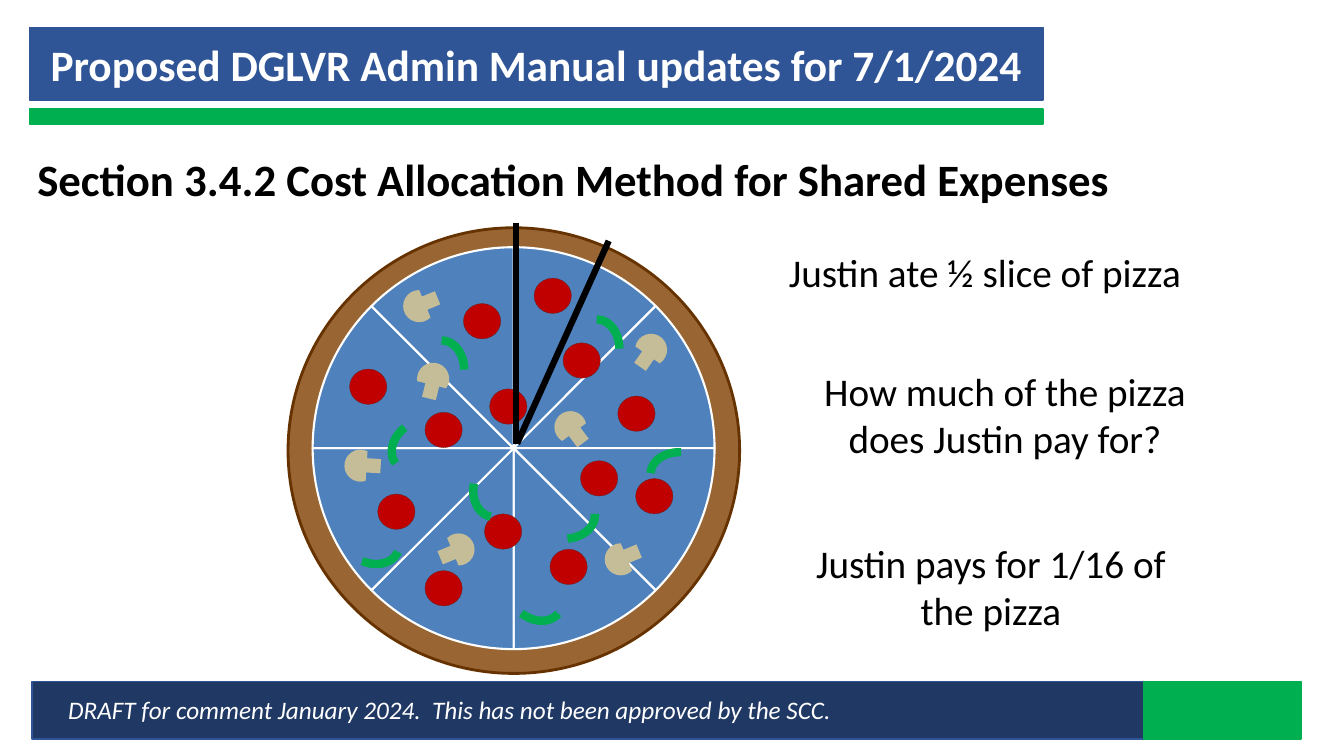
import math
from collections import namedtuple
from dataclasses import dataclass

import lxml.etree
import pptx
import pptx.chart.data
import pptx.dml.color
import pptx.enum.chart
import pptx.enum.shapes
import pptx.enum.text
import pptx.oxml
import pptx.oxml.ns
import pptx.util

Cm = pptx.util.Cm
Pt = pptx.util.Pt
Kind = pptx.enum.shapes.MSO_SHAPE
Align = pptx.enum.text.PP_ALIGN
Box = namedtuple("Box", "x y w h")


@dataclass(frozen=True)
class Theme:
    font: str = "Calibri"
    white: str = "FFFFFF"
    black: str = "000000"
    blue: str = "2F5597"
    navy: str = "203864"
    green: str = "00B050"
    crust: str = "996633"
    rim: str = "663300"
    slice: str = "70AD47"
    meat: str = "C00000"
    edge: str = "632523"
    shroom: str = "C4BD97"
    head: float = 32
    title: float = 31
    body: float = 28
    foot: float = 18
    chart: float = 10


THEME = Theme()


def color(code):
    return pptx.dml.color.RGBColor.from_string(code)


def place(box, x, y, w, h):
    return [Cm(n) for n in (box.x + x, box.y + y, w, h)]


def write(shape, text, size, ink=THEME.black, bold=False, italic=False,
          align=Align.LEFT, space=None, anchor=None, grow=True):
    frame = shape.text_frame
    frame.word_wrap = True
    fit = pptx.enum.text.MSO_AUTO_SIZE
    frame.auto_size = fit.SHAPE_TO_FIT_TEXT if grow else fit.NONE
    if anchor is not None:
        frame.vertical_anchor = anchor
    para = frame.paragraphs[0]
    para.alignment = align
    if space:
        para.line_spacing = space
    run = para.add_run()
    run.text = text
    font = run.font
    font.name, font.size = THEME.font, Pt(size)
    font.bold, font.italic = bold, italic
    font.color.rgb = color(ink)


def label(shapes, spot, text, size, **style):
    write(shapes.add_textbox(*spot), text, size, **style)


def draw(shapes, kind, spot, fill=None, line=None, width=1, turn=0):
    shape = shapes.add_shape(kind, *spot)
    shape.shadow.inherit = False
    shape.rotation = turn
    if fill:
        shape.fill.solid()
        shape.fill.fore_color.rgb = color(fill)
    else:
        shape.fill.background()
    if line:
        shape.line.color.rgb = color(line)
        shape.line.width = Pt(width)
    else:
        shape.line.fill.background()


def header(slide, box):
    bars = ((0, 1.83, THEME.blue), (2.06, 0.38, THEME.green))
    for y, h, tint in bars:
        draw(slide.shapes, Kind.RECTANGLE, place(box, 0, y, box.w, h), tint, tint)
    title = slide.shapes.title
    title.left, title.top, title.width, title.height = place(box, 0.28, -0.05, 25.02, 2.29)
    write(title, "Proposed DGLVR Admin Manual updates for 7/1/2024", THEME.title,
          ink=THEME.white, bold=True, space=0.7, grow=False,
          anchor=pptx.enum.text.MSO_ANCHOR.MIDDLE)
    title.element.getparent().append(title.element)


def footer(slide, box):
    split = 28.02
    draw(slide.shapes, Kind.RECTANGLE, place(box, 0, 0, split, box.h), THEME.navy, THEME.blue)
    draw(slide.shapes, Kind.RECTANGLE, place(box, split, 0, box.w - split, box.h),
         THEME.green, THEME.green)
    label(slide.shapes, place(box, 0.66, 0.2, 20.17, 1.02),
          "DRAFT for comment January 2024.  This has not been approved by the SCC.",
          THEME.foot, ink=THEME.white, italic=True)


def notes(slide, box):
    rows = (
        (0, 0, 10.54, 1.45, "Justin ate ½ slice of pizza", Align.LEFT),
        (0.13, 3.02, 11.13, 2.64, "How much of the pizza does Justin pay for?", Align.CENTER),
        (0.08, 7.34, 10.52, 2.64, "Justin pays for 1/16 of the pizza", Align.CENTER),
    )
    for x, y, w, h, text, align in rows:
        label(slide.shapes, place(box, x, y, w, h), text, THEME.body, align=align)


def pie(shapes, box):
    data = pptx.chart.data.CategoryChartData()
    data.categories = [str(n) for n in range(1, 9)]
    data.add_series("Series 1", [12] * 8)
    w, h, disc = 17.17, 10.85, 10.13
    chart = shapes.add_chart(pptx.enum.chart.XL_CHART_TYPE.PIE,
                             *place(box, -2.9, 0.13, w, h), data).chart
    chart.has_title = chart.has_legend = False
    chart.font.name, chart.font.size = THEME.font, Pt(THEME.chart)
    chart.font.color.rgb = color(THEME.black)
    plot = chart.plots[0]
    plot.vary_by_categories = False
    form = plot.series[0].format
    form.fill.solid()
    form.fill.fore_color.rgb = color(THEME.slice)
    form.line.color.rgb = color(THEME.white)
    form.line.width = Pt(1.5)

    qn = pptx.oxml.ns.qn
    area = chart.element.find(".//" + qn("c:plotArea"))
    for old in area.findall(qn("c:layout")):
        area.remove(old)
    layout = lxml.etree.Element(qn("c:layout"))
    area.insert(0, layout)
    manual = lxml.etree.SubElement(layout, qn("c:manualLayout"))
    rules = (("layoutTarget", "inner"), ("xMode", "edge"), ("yMode", "edge"),
             ("x", (1 - disc / w) / 2), ("y", (1 - disc / h) / 2),
             ("w", disc / w), ("h", disc / h))
    for tag, value in rules:
        lxml.etree.SubElement(manual, qn("c:" + tag)).set("val", str(value))


def mushroom(shapes, box, x, y, turn):
    cap, w, h = 0.81, 0.46, 0.36
    draw(shapes, Kind.CHORD, place(box, x, y, cap, cap), THEME.shroom, turn=turn)
    angle = math.radians(turn - 26)
    left = x + cap / 2 + 0.28 * math.cos(angle) - w / 2
    top = y + cap / 2 + 0.28 * math.sin(angle) - h / 2
    draw(shapes, Kind.RECTANGLE, place(box, left, top, w, h), THEME.shroom, turn=turn - 22.5)


def cut(shapes, box, *ends):
    line = shapes.add_connector(pptx.enum.shapes.MSO_CONNECTOR.STRAIGHT,
                                *place(box, *ends[:2], box.x + ends[2], box.y + ends[3]))
    line.line.color.rgb = color(THEME.black)
    line.line.width = Pt(4.5)
    lxml.etree.SubElement(line.element.spPr, pptx.oxml.ns.qn("a:effectLst"))


def pizza(slide, box):
    shapes = slide.shapes.add_group_shape().shapes
    draw(shapes, Kind.OVAL, place(box, 0, 0, box.w, box.h), THEME.crust, THEME.rim, 2)
    pie(shapes, box)
    meats = ((1.55, 3.56), (4.42, 1.91), (3.45, 4.65), (2.26, 6.71), (4.95, 7.21),
             (6.93, 2.9), (6.2, 1.27), (6.6, 8.1), (7.37, 5.87), (8.31, 4.24),
             (5.08, 4.06), (3.45, 8.64), (8.76, 6.32))
    for x, y in meats:
        draw(shapes, Kind.OVAL, place(box, x, y, 0.94, 0.89), THEME.meat, THEME.edge, 0.25)
    caps = ((2.9, 1.57, 0), (3.25, 3.4, 126.5), (7.98, 7.95, 0), (1.42, 5.59, 26.1),
            (8.74, 2.67, 147.3), (3.89, 7.7, 180), (6.71, 4.62, 76))
    for spot in caps:
        mushroom(shapes, box, *spot)
    peppers = ((3.3, 2.84, 0), (5.66, 8.53, 128.2), (2.72, 4.75, 232.3),
               (9.3, 5.49, 273.4), (4.67, 5.82, 190.7), (7.21, 2.31, 0),
               (1.52, 7.14, 113.3), (6.43, 6.53, 85.9))
    for x, y, turn in peppers:
        draw(shapes, Kind.ARC, place(box, x, y, 1.14, 1.47), line=THEME.green, width=6, turn=turn)
    cuts = slide.shapes.add_group_shape().shapes
    cut(cuts, box, 5.74, -0.13, 5.74, 5.44)
    cut(cuts, box, 8.08, 0.33, 5.77, 5.44)


def main():
    deck = pptx.Presentation()
    deck.slide_width, deck.slide_height = Cm(33.87), Cm(19.05)
    slide = deck.slides.add_slide(deck.slide_layouts.get_by_name("Title Only"))
    header(slide, Box(0.74, 0.69, 25.55, 2.44))
    footer(slide, Box(0.81, 17.17, 31.98, 1.45))
    notes(slide, Box(19.63, 6.12, 11.26, 9.98))
    pizza(slide, Box(7.26, 5.74, 11.38, 11.23))
    label(slide.shapes, place(Box(0.69, 3.71, 28.3, 1.63), 0, 0, 28.3, 1.63),
          "Section 3.4.2 Cost Allocation Method for Shared Expenses", THEME.head, bold=True)
    deck.save("out.pptx")


if __name__ == "__main__":
    main()
